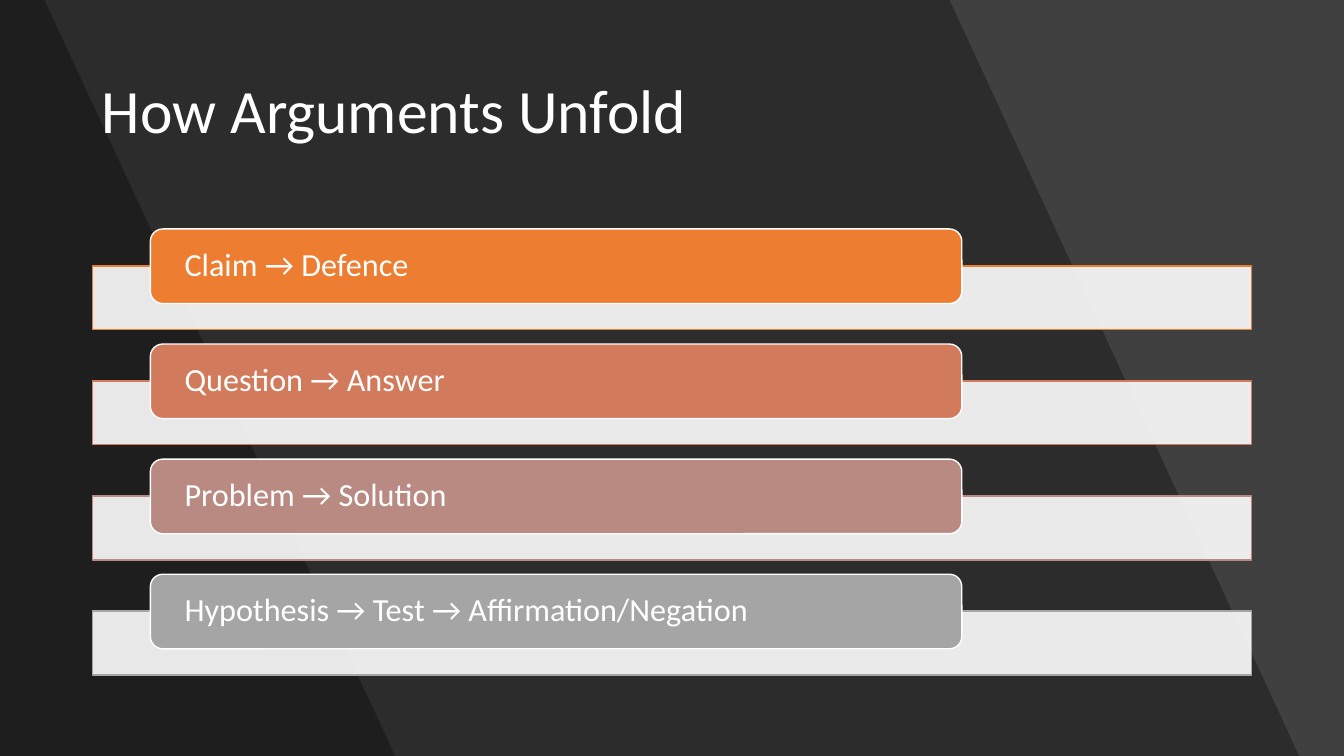
"""Build the slide "How Arguments Unfold" with four argument patterns on bars."""
import lxml.etree
import pptx
import pptx.dml.color
import pptx.enum.shapes
import pptx.enum.text
import pptx.oxml.ns
import pptx.util

Cm = pptx.util.Cm
Shape = pptx.enum.shapes.MSO_SHAPE


def paint(shape, fill, opacity=100, line=None):
    shape.shadow.inherit = False
    shape.fill.solid()
    shape.fill.fore_color.rgb = pptx.dml.color.RGBColor.from_string(fill)
    if opacity < 100:
        color = shape.fill._xPr.find(".//" + pptx.oxml.ns.qn("a:srgbClr"))
        alpha = lxml.etree.SubElement(color, pptx.oxml.ns.qn("a:alpha"))
        alpha.set("val", str(opacity * 1000))
    if line:
        shape.line.color.rgb = pptx.dml.color.RGBColor.from_string(line)
        shape.line.width = pptx.util.Pt(1)
    else:
        shape.line.fill.background()


def write(shape, text, size, inset):
    frame = shape.text_frame
    frame.word_wrap = True
    frame.vertical_anchor = pptx.enum.text.MSO_ANCHOR.MIDDLE
    frame.margin_left = frame.margin_right = Cm(inset)
    frame.margin_top = frame.margin_bottom = 0
    para = frame.paragraphs[0]
    para.alignment = pptx.enum.text.PP_ALIGN.LEFT
    para.line_spacing = 0.9
    span = para.add_run()
    span.text = text
    span.font.name = "Calibri"
    span.font.size = pptx.util.Pt(size)
    span.font.color.rgb = pptx.dml.color.RGBColor.from_string("FFFFFF")


deck = pptx.Presentation()
deck.slide_width = Cm(33.87)
deck.slide_height = Cm(19.05)
page = deck.slides.add_slide(deck.slide_layouts[6])
page.background.fill.solid()
page.background.fill.fore_color.rgb = pptx.dml.color.RGBColor.from_string("404040")

for top_right, bottom_right in [(23.93, 32.74), (1.12, 9.96)]:
    outline = page.shapes.build_freeform(0, 0)
    outline.add_line_segments([
        (Cm(top_right), 0),
        (Cm(bottom_right), deck.slide_height),
        (0, deck.slide_height),
    ], close=True)
    paint(outline.convert_to_shape(), "000000", opacity=30)

title = page.shapes.add_textbox(Cm(2.32), Cm(1.01), Cm(29.23), Cm(3.68))
write(title, "How Arguments Unfold", 44, 0.25)

patterns = [
    ("Claim → Defence", "ED7D31"),
    ("Question → Answer", "D17B5C"),
    ("Problem → Solution", "B98A82"),
    ("Hypothesis → Test → Affirmation/Negation", "A5A5A5"),
]
for row, (text, color) in enumerate(patterns):
    top = 5.77 + row * 2.9
    bar = page.shapes.add_shape(
        Shape.RECTANGLE, Cm(2.33), Cm(top + 0.93), Cm(29.21), Cm(1.61))
    paint(bar, "FFFFFF", opacity=90, line=color)
    label = page.shapes.add_shape(
        Shape.ROUNDED_RECTANGLE, Cm(3.79), Cm(top), Cm(20.45), Cm(1.88))
    paint(label, color, line="FFFFFF")
    write(label, text, 23, 0.77)

deck.save("out.pptx")
